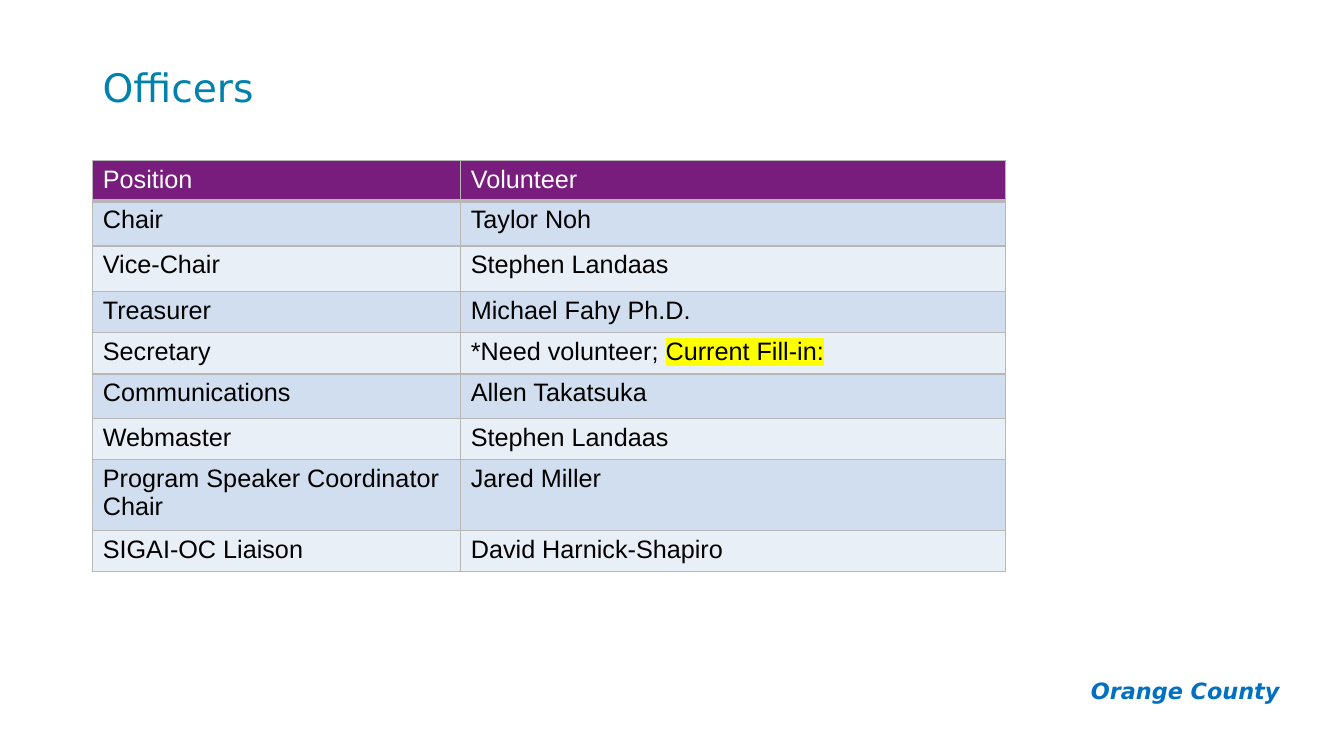
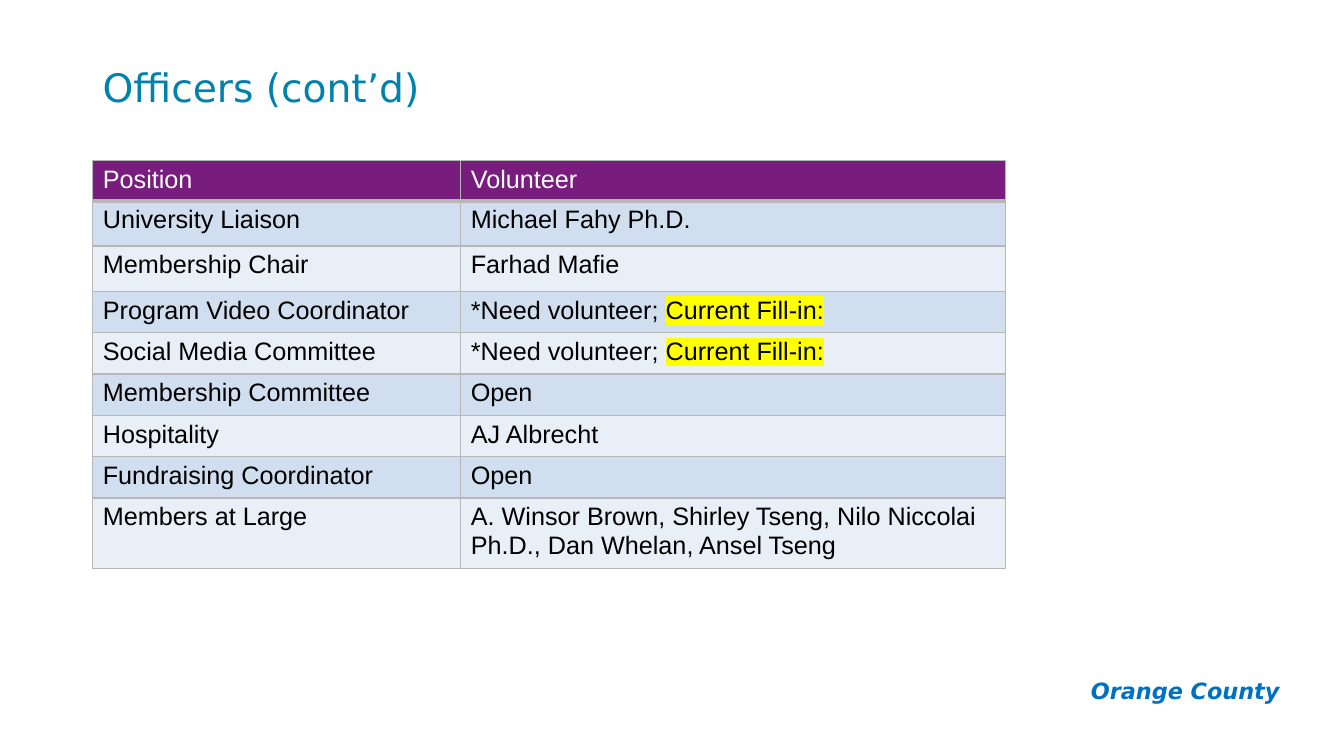
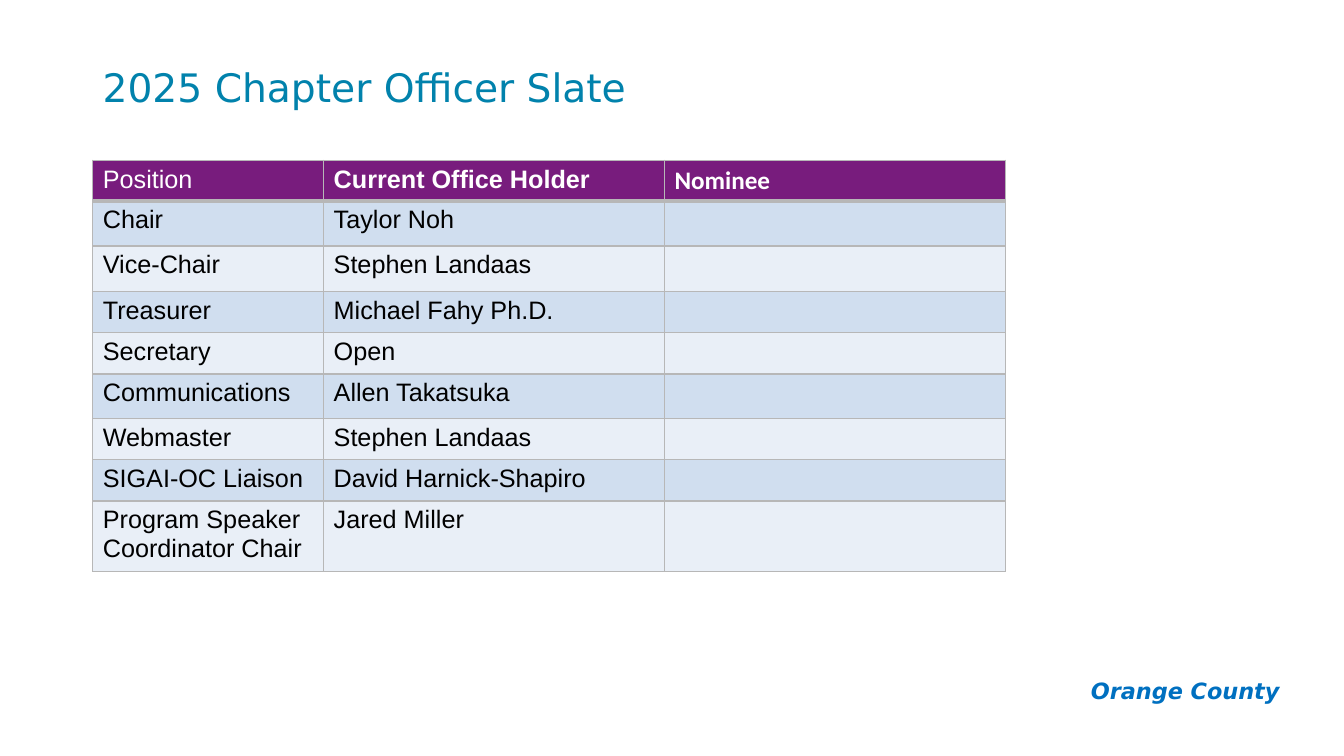
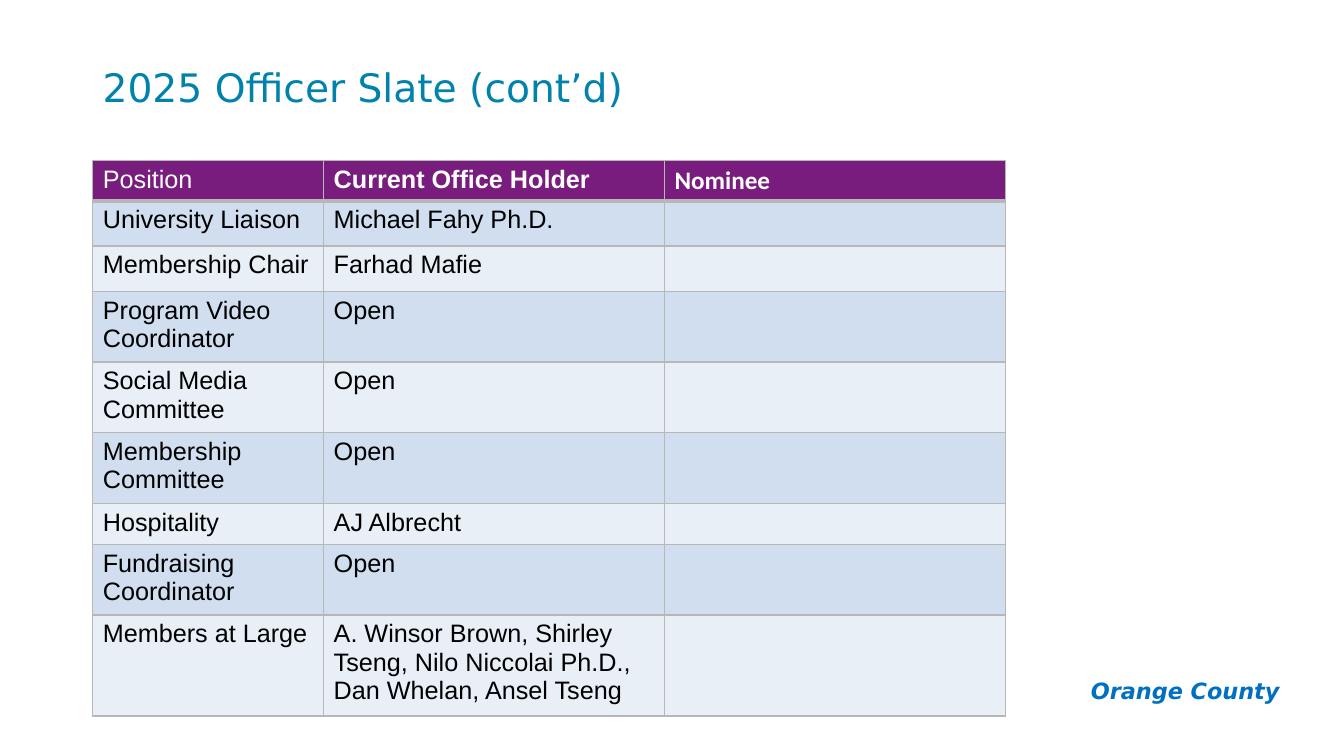
from lxml import etree
from pptx import Presentation
from pptx.dml.color import RGBColor
from pptx.enum.text import MSO_ANCHOR, PP_ALIGN
from pptx.oxml.ns import qn
from pptx.util import Inches, Pt

RIGHT, LEFT, MIDDLE = PP_ALIGN.RIGHT, PP_ALIGN.LEFT, MSO_ANCHOR.MIDDLE

# Shared look
TITLE, FOOTER, HEADER = "0182AC", "0070C0", "781C7D"
BANDS = ("E9EFF7", "D0DEEF")
GRID, MARK, WHITE, BLACK = "B7B7B7", "FFFF00", "FFFFFF", "000000"
HEAD_FONT, BODY_FONT, NOMINEE_FONT = "DejaVu Sans", "Arial", "Calibri"
LEFT_EDGE, TABLE_TOP = 0.92, 1.59
HEADER_H, TALL_H, MID_H, ROW_H = 0.36, 0.45, 0.44, 0.41

# Slide contents
FILL_IN = "Current Fill-in:"
NEEDED = "*Need volunteer; " + FILL_IN
MEMBERS = "A. Winsor Brown, Shirley Tseng, Nilo Niccolai Ph.D., Dan Whelan, Ansel Tseng"
VOLUNTEER_COLS = (("Position", 3.65), ("Volunteer", 5.4))
SLATE_COLS = (("Position", 2.29), ("Current Office Holder", 3.38), ("Nominee", 3.38))
CORE = [
    ("Chair", "Taylor Noh"),
    ("Vice-Chair", "Stephen Landaas"),
    ("Treasurer", "Michael Fahy Ph.D."),
]
WEB = [("Communications", "Allen Takatsuka"), ("Webmaster", "Stephen Landaas")]
SPEAKER = ("Program Speaker Coordinator Chair", "Jared Miller")
LIAISON = ("SIGAI-OC Liaison", "David Harnick-Shapiro")
OUTREACH = [("University Liaison", "Michael Fahy Ph.D."), ("Membership Chair", "Farhad Mafie")]
COMMITTEES = [
    ("Membership Committee", "Open"),
    ("Hospitality", "AJ Albrecht"),
    ("Fundraising Coordinator", "Open"),
    ("Members at Large", MEMBERS),
]
VIDEO, SOCIAL = "Program Video Coordinator", "Social Media Committee"
SLIDES = [
    ("Officers", VOLUNTEER_COLS,
     CORE + [("Secretary", NEEDED)] + WEB + [SPEAKER, LIAISON]),
    ("Officers (cont’d)", VOLUNTEER_COLS,
     OUTREACH + [(VIDEO, NEEDED), (SOCIAL, NEEDED)] + COMMITTEES),
    ("2025 Chapter Officer Slate", SLATE_COLS,
     CORE + [("Secretary", "Open")] + WEB + [LIAISON, SPEAKER]),
    ("2025 Officer Slate (cont’d)", SLATE_COLS,
     OUTREACH + [(VIDEO, "Open"), (SOCIAL, "Open")] + COMMITTEES),
]


def rgb(value):
    return RGBColor.from_string(value)


def style(r, font, size, color, bold=False, italic=False):
    r.font.name, r.font.size = font, Pt(size)
    r.font.bold, r.font.italic = bold, italic
    r.font.color.rgb = rgb(color)


prs = Presentation()
prs.slide_width, prs.slide_height = Inches(13.33), Inches(7.5)

for title, columns, people in SLIDES:
    s = prs.slides.add_slide(prs.slide_layouts[6])

    # Footer and title
    for text, box, margin, align, look in (
        ("Orange County", (10.51, 6.62, 2.28, 0.47), 0.1, RIGHT,
         (HEAD_FONT, 16, FOOTER, True, True)),
        (title, (LEFT_EDGE, 0.4, 11.5, 0.99), 0.05, LEFT, (HEAD_FONT, 28, TITLE)),
    ):
        tf = s.shapes.add_textbox(*map(Inches, box)).text_frame
        tf.word_wrap = True
        tf.margin_top = tf.margin_bottom = Inches(margin)
        tf.text = text
        p = tf.paragraphs[0]
        p.alignment = align
        style(p.runs[0], *look)
    tf.vertical_anchor = MIDDLE
    p.line_spacing = 0.9

    # Table grid
    heights = [HEADER_H, TALL_H, TALL_H] + [
        MID_H if name == "Communications" else ROW_H for name, _ in people[2:]]
    widths = [width for _, width in columns]
    table = s.shapes.add_table(
        len(heights), len(widths), Inches(LEFT_EDGE), Inches(TABLE_TOP),
        Inches(sum(widths)), Inches(sum(heights))).table
    for col, width in zip(table.columns, widths):
        col.width = Inches(width)
    for row, height in zip(table.rows, heights):
        row.height = Inches(height)

    # Table cells; the nominee column stays empty below its header
    rows = [[name for name, _ in columns]] + people
    for i, row in enumerate(table.rows):
        for j, cell in enumerate(row.cells):
            cell.fill.solid()
            cell.fill.fore_color.rgb = rgb(BANDS[i % 2] if i else HEADER)
            text = rows[i][j] if j < len(rows[i]) else ""
            plain, mark, _ = text.partition(FILL_IN)
            p = cell.text_frame.paragraphs[0]
            for part in filter(None, (plain, mark)):
                r = p.add_run()
                r.text = part
                style(r, NOMINEE_FONT if part == "Nominee" else BODY_FONT, 18,
                      BLACK if i else WHITE, i == 0 and len(columns) == 3 and j > 0)
                if part == FILL_IN:
                    hl = etree.Element(qn("a:highlight"))
                    etree.SubElement(hl, qn("a:srgbClr"), val=MARK)
                    r.font._element.find(qn("a:solidFill")).addnext(hl)

            # Borders, heavier between header and body
            tcPr = cell._tc.get_or_add_tcPr()
            for k, side in enumerate("LRTB"):
                heavy = (i, side) in ((0, "B"), (1, "T"))
                ln = etree.Element(qn("a:ln" + side), w=str(Pt(3 if heavy else 1)))
                fill = etree.SubElement(ln, qn("a:solidFill"))
                etree.SubElement(fill, qn("a:srgbClr"), val=GRID)
                tcPr.insert(k, ln)

prs.save("out.pptx")
